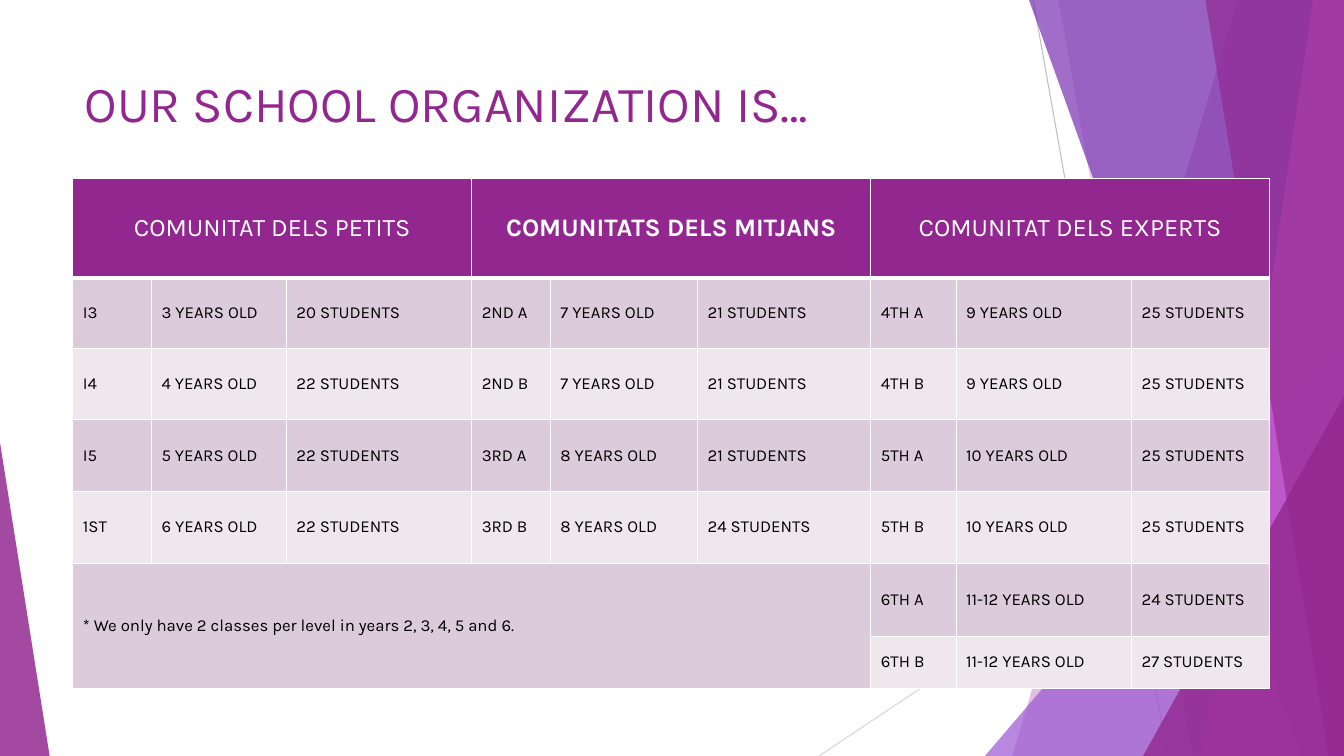
from dataclasses import dataclass

from lxml import etree
from pptx import Presentation
from pptx.dml.color import RGBColor
from pptx.enum.shapes import MSO_CONNECTOR, MSO_SHAPE
from pptx.enum.text import MSO_ANCHOR, PP_ALIGN
from pptx.oxml.ns import qn
from pptx.util import Pt

STRAIGHT = MSO_CONNECTOR.STRAIGHT
TRIANGLE = MSO_SHAPE.ISOSCELES_TRIANGLE
TOP, MIDDLE = MSO_ANCHOR.TOP, MSO_ANCHOR.MIDDLE
LEFT, CENTER = PP_ALIGN.LEFT, PP_ALIGN.CENTER

WIDTH, HEIGHT = 960, 540
FONT = "Karla"
COLORS = {
    "purple": "92278F",
    "violet": "9B57D3",
    "indigo": "762EB1",
    "pink": "D663D2",
    "odd_row": "DBCBDB",
    "even_row": "EEE7EE",
    "white": "FFFFFF",
    "black": "000000",
    "gray": "BFBFBF",
    "light_gray": "D8D8D8",
}


@dataclass(frozen=True)
class Ray:
    start: tuple[float, float]
    end: tuple[float, float]
    color: str


@dataclass(frozen=True)
class Band:
    top_x: float
    bottom_x: float
    color: str
    opacity: int


@dataclass(frozen=True)
class Wedge:
    left: float
    top: float
    width: float
    apex: float
    color: str
    opacity: int


@dataclass(frozen=True)
class Community:
    name: str
    bold: bool
    classes: list[tuple[str, int | str, int]]


RAYS = [
    Ray((738, 0), (834, HEIGHT), "gray"),
    Ray((WIDTH, 290), (585, HEIGHT), "light_gray"),
]
FACETS = [
    Band(884, 723, "purple", 29),
    Band(756, 852, "purple", 20),
    Wedge(703.5, 240, 256.5, 1, "violet", 71),
    Band(735, 929.5, "indigo", 69),
    Band(938, 858, "pink", 69),
    Band(861, 949, "purple", 64),
    Wedge(816.5, 283, 143.5, 1, "purple", 80),
    Wedge(0, 316, 35.5, 0, "purple", 84),
]
COMMUNITIES = [
    Community("COMUNITAT DELS PETITS", False,
              [("I3", 3, 20), ("I4", 4, 22), ("I5", 5, 22), ("1ST", 6, 22)]),
    Community("COMUNITATS DELS MITJANS", True,
              [("2ND A", 7, 21), ("2ND B", 7, 21), ("3RD A", 8, 21), ("3RD B", 8, 24)]),
    Community("COMUNITAT DELS EXPERTS", False,
              [("4TH A", 9, 25), ("4TH B", 9, 25), ("5TH A", 10, 25), ("5TH B", 10, 25),
               ("6TH A", "11-12", 24), ("6TH B", "11-12", 27)]),
]
NOTE = "* We only have 2 classes per level in years 2, 3, 4, 5 and 6."
COLUMN_WIDTHS = [56.2, 96.4, 132.4, 56.2, 105.1, 123.8, 61, 125.3, 98.6]
ROW_HEIGHTS = [70.9, 50.6, 50.6, 51.3, 51.3, 52.4, 36.9]


def rgb(color: str) -> RGBColor:
    return RGBColor.from_string(COLORS[color])


def draw_ray(shapes, ray: Ray) -> None:
    line = shapes.add_connector(STRAIGHT, *map(Pt, ray.start + ray.end))
    line.line.color.rgb = rgb(ray.color)
    line.line.width = Pt(0.75)
    etree.SubElement(line._element.spPr, qn("a:effectLst"))


def draw_facet(shapes, facet: Band | Wedge) -> None:
    if isinstance(facet, Band):
        outline = shapes.build_freeform(Pt(facet.top_x), 0)
        outline.add_line_segments([
            (Pt(WIDTH), 0), (Pt(WIDTH), Pt(HEIGHT)), (Pt(facet.bottom_x), Pt(HEIGHT)),
        ])
        shape = outline.convert_to_shape()
    else:
        shape = shapes.add_shape(TRIANGLE, Pt(facet.left), Pt(facet.top),
                                 Pt(facet.width), Pt(HEIGHT - facet.top))
        shape.adjustments[0] = facet.apex
    shape.shadow.inherit = False
    shape.line.fill.background()
    shape.fill.solid()
    shape.fill.fore_color.rgb = rgb(facet.color)
    tint = shape._element.spPr.find(f"{qn('a:solidFill')}/{qn('a:srgbClr')}")
    etree.SubElement(tint, qn("a:alpha"), val=str(facet.opacity * 1000))


def write(paragraph, text: str, size: float, color: str,
          align=LEFT, bold: bool = False) -> None:
    paragraph.text = text
    paragraph.alignment = align
    paragraph.font.name = FONT
    paragraph.font.size = Pt(size)
    paragraph.font.bold = bold
    paragraph.font.color.rgb = rgb(color)


def draw_title(shapes) -> None:
    title = shapes.add_textbox(Pt(53.3), Pt(48), Pt(677), Pt(104)).text_frame
    title.word_wrap = True
    title.vertical_anchor = TOP
    write(title.paragraphs[0], "OUR SCHOOL ORGANIZATION IS…", 36, "purple")


def style_cell(cell, row: int) -> None:
    cell.vertical_anchor = MIDDLE
    cell.fill.solid()
    cell.fill.fore_color.rgb = rgb(
        "purple" if row == 0 else "odd_row" if row % 2 else "even_row")
    thick_side = {0: "B", 1: "T"}.get(row)
    properties = cell._tc.get_or_add_tcPr()
    for position, side in enumerate("LRTB"):
        width = Pt(3 if side == thick_side else 1)
        border = etree.Element(qn(f"a:ln{side}"), w=str(width))
        paint = etree.SubElement(border, qn("a:solidFill"))
        etree.SubElement(paint, qn("a:srgbClr"), val=COLORS["white"])
        properties.insert(position, border)


def draw_schedule(shapes) -> None:
    schedule = shapes.add_table(
        len(ROW_HEIGHTS), len(COLUMN_WIDTHS), Pt(52), Pt(127.6),
        Pt(sum(COLUMN_WIDTHS)), Pt(sum(ROW_HEIGHTS))).table
    schedule.first_row = False
    schedule.horz_banding = False
    for column, width in zip(schedule.columns, COLUMN_WIDTHS):
        column.width = Pt(width)
    for row, height in enumerate(ROW_HEIGHTS):
        schedule.rows[row].height = Pt(height)
        for cell in schedule.rows[row].cells:
            style_cell(cell, row)
    for index, community in enumerate(COMMUNITIES):
        first = index * 3
        heading = schedule.cell(0, first)
        heading.merge(schedule.cell(0, first + 2))
        write(heading.text_frame.paragraphs[0], community.name, 18, "white",
              CENTER, community.bold)
        for row, (level, age, students) in enumerate(community.classes, 1):
            details = (level, f"{age} YEARS OLD", f"{students} STUDENTS")
            for column, detail in enumerate(details, first):
                write(schedule.cell(row, column).text_frame.paragraphs[0],
                      detail, 12, "black")
    note = schedule.cell(5, 0)
    note.merge(schedule.cell(6, 5))
    write(note.text_frame.paragraphs[0], NOTE, 12, "black")


def main() -> None:
    presentation = Presentation()
    presentation.slide_width = Pt(WIDTH)
    presentation.slide_height = Pt(HEIGHT)
    shapes = presentation.slides.add_slide(presentation.slide_layouts[6]).shapes
    for ray in RAYS:
        draw_ray(shapes, ray)
    for facet in FACETS:
        draw_facet(shapes, facet)
    draw_title(shapes)
    draw_schedule(shapes)
    presentation.save("out.pptx")


if __name__ == "__main__":
    main()
